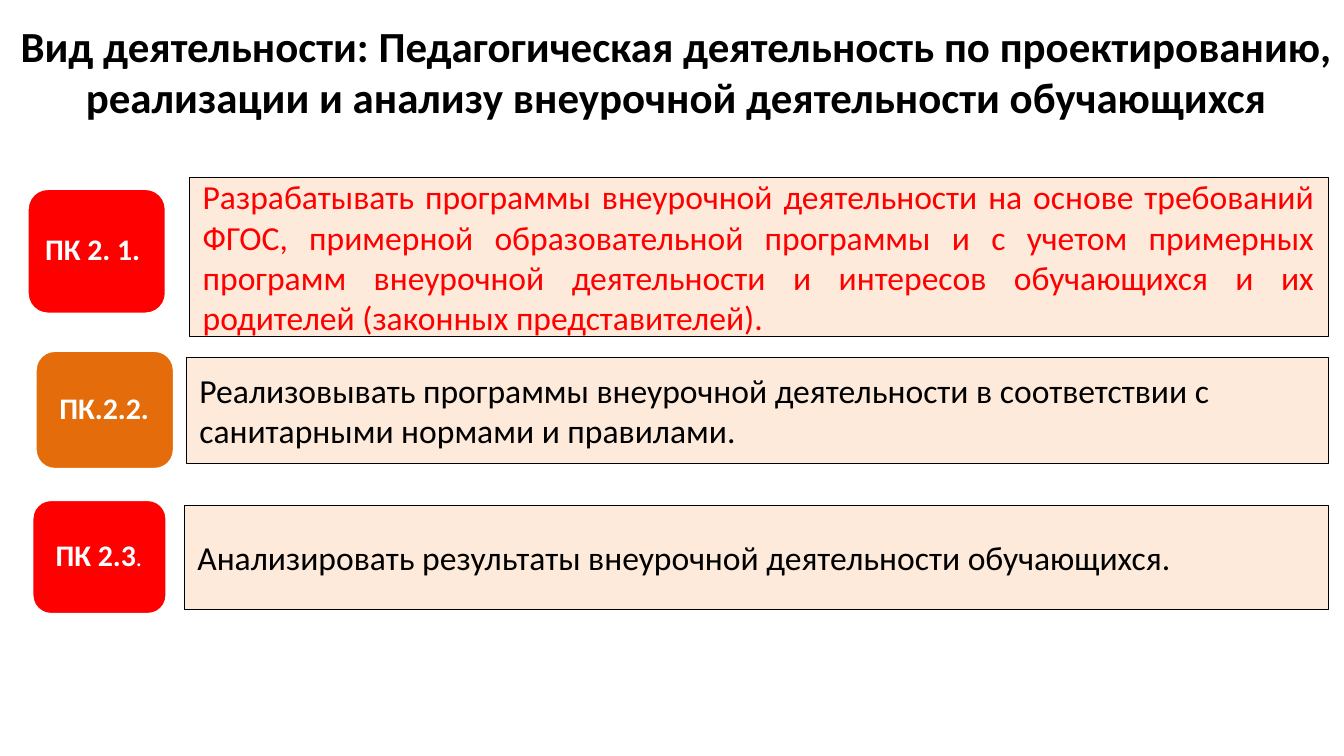
from pptx import Presentation
from pptx.dml.color import RGBColor
from pptx.enum.shapes import MSO_SHAPE as Kind
from pptx.enum.text import MSO_ANCHOR as Anchor, MSO_AUTO_SIZE as Fit, PP_ALIGN as Align
from pptx.util import Emu, Pt

SCALE = 4572
RED, ORANGE, PEACH = "FF0000", "E46C0A", "FDEADA"
BLACK, WHITE = "000000", "FFFFFF"

TITLE = ("Вид деятельности: Педагогическая деятельность по проектированию, "
         "реализации и анализу внеурочной деятельности обучающихся")
ROWS = [
    ((40, 280, 208, 188), RED, [("ПК 2. 1. ", {})],
     (282, 264, 1694, 236),
     "Разрабатывать программы внеурочной деятельности на основе требований ФГОС, "
     "примерной образовательной программы и с учетом примерных программ внеурочной "
     "деятельности и интересов обучающихся и их родителей (законных представителей).",
     {"color": RED, "align": Align.JUSTIFY}),
    ((52, 521, 208, 178), ORANGE, [("ПК.2.2.", {})],
     (277, 532, 1699, 157),
     "Реализовывать программы внеурочной деятельности в соответствии с "
     "санитарными нормами и правилами.", {}),
    ((47, 743, 202, 172), RED, [("ПК 2.3", {}), (".", {"size": 13, "bold": False})],
     (274, 752, 1702, 155),
     "Анализировать результаты внеурочной деятельности обучающихся.", {}),
]


def px(*vals):
    return [Emu(val * SCALE) for val in vals]


def paint(hue):
    return RGBColor.from_string(hue)


def write(frame, runs, size=18, color=BLACK, bold=False, align=Align.LEFT,
          space=1.0, inset=(20, 10)):
    frame.word_wrap = True
    frame.auto_size = Fit.NONE
    frame.vertical_anchor = Anchor.MIDDLE
    frame.margin_left, frame.margin_top = px(*inset)
    frame.margin_right, frame.margin_bottom = px(*inset)
    para = frame.paragraphs[0]
    para.alignment = align
    para.line_spacing = space
    for text, style in runs:
        run = para.add_run()
        run.text = text
        font = run.font
        font.name = "Calibri"
        font.size = Pt(style.get("size", size))
        font.bold = style.get("bold", bold)
        font.color.rgb = paint(color)


def block(shapes, kind, box, fill, line, width):
    shape = shapes.add_shape(kind, *px(*box))
    shape.shadow.inherit = False
    shape.fill.solid()
    shape.fill.fore_color.rgb = paint(fill)
    shape.line.color.rgb = paint(line)
    shape.line.width = Pt(width)
    return shape


def head(slide, box):
    title = slide.shapes.title
    title.left, title.top, title.width, title.height = px(*box)
    write(title.text_frame, [(TITLE, {})], size=23, bold=True, align=Align.CENTER)


def badge(slide, box, fill, runs):
    left, top, width, height = box
    group = slide.shapes.add_group_shape()
    block(group.shapes, Kind.ROUNDED_RECTANGLE, box, fill, WHITE, 2)
    label = group.shapes.add_textbox(*px(left + 8, top + 8, width - 18, height - 17))
    write(label.text_frame, runs, size=16, color=WHITE, bold=True,
          align=Align.CENTER, space=0.9, inset=(14, 6))


def panel(slide, box, text, style):
    shape = block(slide.shapes, Kind.RECTANGLE, box, PEACH, BLACK, 0.25)
    write(shape.text_frame, [(text, {})], **style)


def main():
    deck = Presentation()
    deck.slide_width, deck.slide_height = px(2000, 1125)
    slide = deck.slides.add_slide(deck.slide_layouts[5])
    head(slide, (-150, 11, 2316, 188))
    for spot, fill, runs, box, text, style in ROWS:
        badge(slide, spot, fill, runs)
        panel(slide, box, text, style)
    deck.save("out.pptx")


if __name__ == "__main__":
    main()
